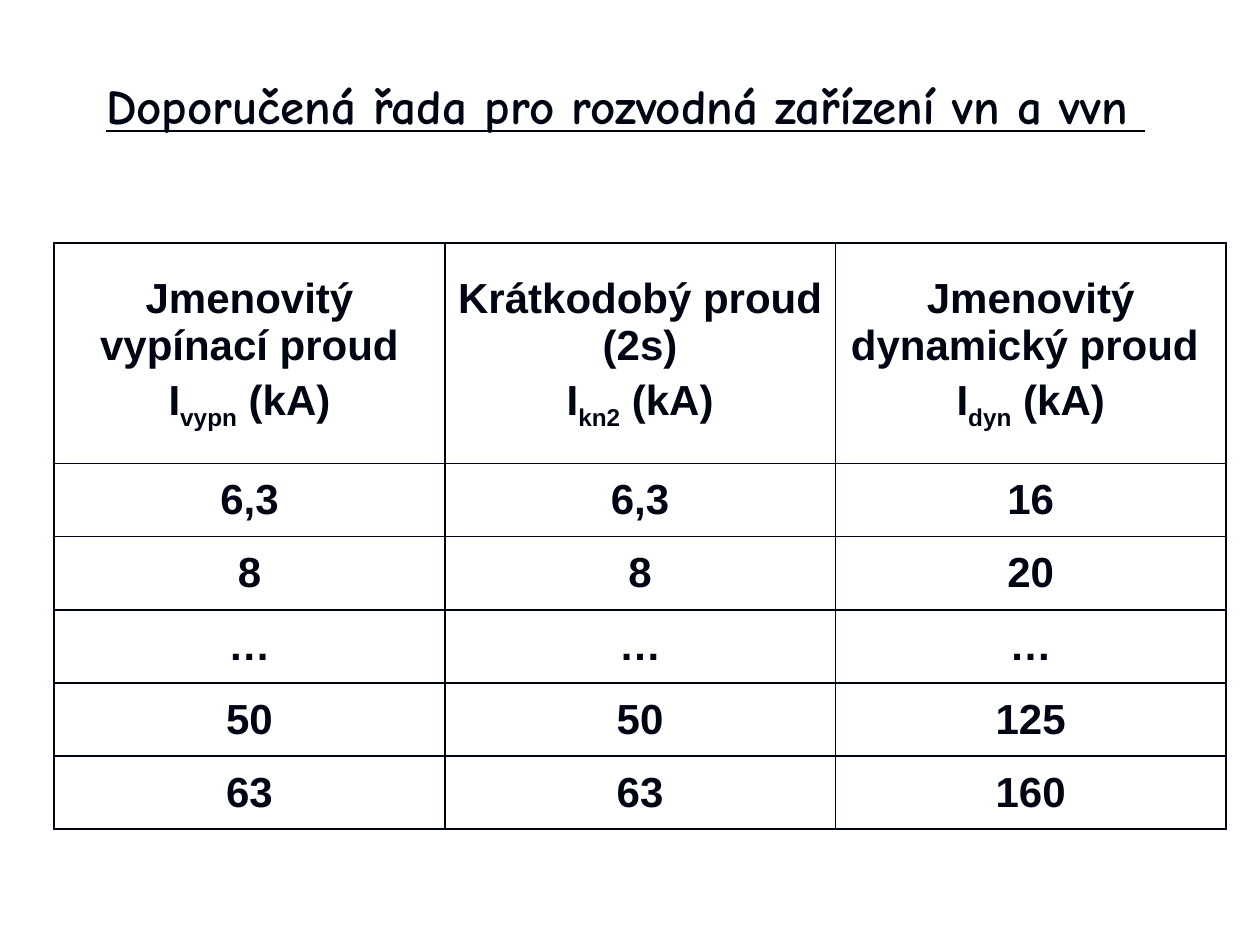
from lxml.etree import SubElement
from pptx import Presentation
from pptx.dml.color import RGBColor
from pptx.enum.text import MSO_ANCHOR, PP_ALIGN
from pptx.oxml.ns import qn
from pptx.util import Inches, Pt

INK = "000514"
HEADERS = [
    ("Jmenovitý vypínací proud", "vypn"),
    ("Krátkodobý proud (2s)", "kn2"),
    ("Jmenovitý dynamický proud ", "dyn"),
]
VALUES = [
    ("6,3", "6,3", "16"),
    ("8", "8", "20"),
    ("…", "…", "…"),
    ("50", "50", "125"),
    ("63", "63", "160"),
]


def color(value):
    return RGBColor.from_string(value)


def style_paragraph(p, font, size):
    p.alignment = PP_ALIGN.CENTER
    p.font.name = font
    p.font.size = Pt(size)
    p.font.bold = True
    p.font.color.rgb = color(INK)


def add_title(slide, text):
    sp = slide.shapes.add_textbox(Inches(0.12), Inches(0.52), Inches(9.69), Inches(0.63))
    tf = sp.text_frame
    tf.word_wrap = True
    tf.vertical_anchor = MSO_ANCHOR.MIDDLE
    p = tf.paragraphs[0]
    p.text = text
    style_paragraph(p, "Comic Neue", 28)
    p.font.underline = True


def add_borders(cell):
    tc_pr = cell._tc.get_or_add_tcPr()
    for side in ("lnL", "lnR", "lnT", "lnB"):
        line = SubElement(tc_pr, qn(f"a:{side}"), w=str(Pt(1)))
        fill = SubElement(line, qn("a:solidFill"))
        SubElement(fill, qn("a:srgbClr"), val=INK)


def add_symbol(p, subscript):
    for text in ("I", subscript, " (kA)"):
        r = p.add_run()
        r.text = text
        if text == subscript:
            r.font._element.set("baseline", "-25000")


def format_cell(cell):
    add_borders(cell)
    cell.fill.background()
    cell.vertical_anchor = MSO_ANCHOR.MIDDLE
    cell.margin_left = cell.margin_right = Inches(0.08)
    cell.margin_top = cell.margin_bottom = Inches(0.08)
    for p in cell.text_frame.paragraphs:
        style_paragraph(p, "Arial", 24)
        p.space_before = Pt(4.8)


def add_current_table(slide):
    table = slide.shapes.add_table(
        len(VALUES) + 1, len(HEADERS), Inches(0.43), Inches(1.93), Inches(9.3), Inches(4.65)
    ).table
    for row in table.rows:
        row.height = Inches(0.58)
    table.rows[0].height = Inches(1.75)
    for col, (label, subscript) in enumerate(HEADERS):
        tf = table.cell(0, col).text_frame
        tf.text = label
        add_symbol(tf.add_paragraph(), subscript)
    for row, values in enumerate(VALUES, 1):
        for col, value in enumerate(values):
            table.cell(row, col).text = value
    for cell in table.iter_cells():
        format_cell(cell)


def main():
    prs = Presentation()
    prs.slide_width = Inches(10)
    prs.slide_height = Inches(7.5)
    slide = prs.slides.add_slide(prs.slide_layouts[6])
    add_title(slide, "Doporučená řada pro rozvodná zařízení vn a vvn ")
    add_current_table(slide)
    prs.save("out.pptx")


if __name__ == "__main__":
    main()
